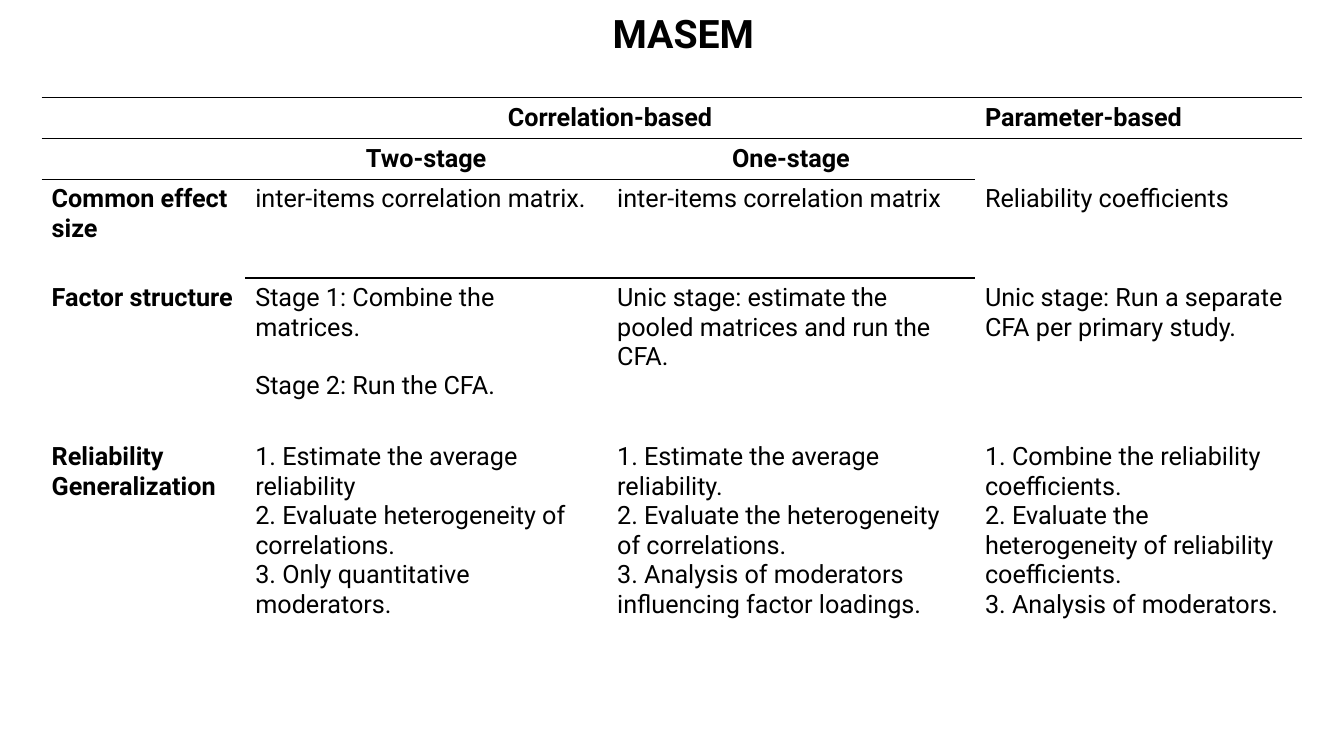
"""Build the MASEM approaches comparison slide."""
from lxml.etree import SubElement
from pptx import Presentation
from pptx.dml.color import RGBColor
from pptx.enum.text import MSO_ANCHOR, PP_ALIGN
from pptx.oxml.ns import qn
from pptx.util import Cm, Pt

TITLE = "MASEM"
APPROACHES = [
    ["", "Correlation-based", "", "Parameter-based"],
    ["", "Two-stage", "One-stage", ""],
    ["Common effect size", "inter-items correlation matrix.",
     "inter-items correlation matrix", "Reliability coefficients"],
    ["Factor structure",
     "Stage 1: Combine the matrices.\nStage 2: Run the CFA.",
     "Unic stage: estimate the pooled matrices and run the CFA.",
     "Unic stage: Run a separate CFA per primary study."],
    ["Reliability Generalization",
     "1. Estimate the average reliability\n"
     "2. Evaluate heterogeneity of correlations.\n"
     "3. Only quantitative moderators.",
     "1. Estimate the average reliability.\n"
     "2. Evaluate the heterogeneity of correlations.\n"
     "3. Analysis of moderators influencing factor loadings.",
     "1. Combine the reliability coefficients.\n"
     "2. Evaluate the heterogeneity of reliability coefficients.\n"
     "3. Analysis of moderators."],
]
HEADER_ROWS = 2
COLUMN_WIDTHS = [5.13, 9.12, 9.27, 8.23]
ROW_HEIGHTS = [1.04, 1.01, 2.49, 4.01, 4.95]
RULED_COLUMNS = {0: (0, 1, 2, 3), 1: (0, 1, 2, 3), 2: (0, 1, 2), 3: (1, 2)}
COLORS = {"ink": "000000"}
FONT = "Roboto"
PLAIN_TABLE_STYLE = "{2D5ABB26-0587-4C30-8999-92F81FD0307C}"


def style_text(paragraph, size, bold):
    paragraph.font.size = Pt(size)
    for run in paragraph.runs:
        run.font.name = FONT
        run.font.size = Pt(size)
        run.font.bold = bold
        run.font.color.rgb = RGBColor.from_string(COLORS["ink"])


def draw_borders(cell, row, column):
    ruled = {"lnT": column in RULED_COLUMNS.get(row, ()),
             "lnB": column in RULED_COLUMNS.get(row + 1, ())}
    properties = cell._tc.get_or_add_tcPr()
    for side in ("lnL", "lnR", "lnT", "lnB"):
        border = SubElement(properties, qn(f"a:{side}"), w=str(Pt(1)))
        if ruled.get(side):
            ink = SubElement(border, qn("a:solidFill"))
            SubElement(ink, qn("a:srgbClr"), val=COLORS["ink"])
        else:
            SubElement(border, qn("a:noFill"))


def add_title(slide):
    title = slide.shapes.add_textbox(Cm(2.08), Cm(0.25), Cm(30.28), Cm(1.4))
    title.text_frame.word_wrap = True
    title.text_frame.text = TITLE
    heading = title.text_frame.paragraphs[0]
    heading.alignment = PP_ALIGN.CENTER
    heading.line_spacing = 0.9
    style_text(heading, 28, True)


def fill_cell(cell, row, column):
    draw_borders(cell, row, column)
    cell.fill.background()
    cell.vertical_anchor = MSO_ANCHOR.TOP
    cell.text_frame.text = APPROACHES[row][column]
    is_header = row < HEADER_ROWS
    for paragraph in cell.text_frame.paragraphs:
        centred = is_header and column in (1, 2)
        paragraph.alignment = PP_ALIGN.CENTER if centred else PP_ALIGN.LEFT
        if paragraph.text.startswith("Stage 2"):
            paragraph.space_before = Pt(21)
        style_text(paragraph, 18, is_header or column == 0)


def add_comparison(slide):
    frame = slide.shapes.add_table(
        len(ROW_HEIGHTS), len(COLUMN_WIDTHS), Cm(1.05), Cm(2.46),
        Cm(sum(COLUMN_WIDTHS)), Cm(sum(ROW_HEIGHTS)))
    comparison = frame.table
    comparison.first_row = comparison.horz_banding = False
    comparison._tbl.tblPr.find(qn("a:tableStyleId")).text = PLAIN_TABLE_STYLE
    for column, width in enumerate(COLUMN_WIDTHS):
        comparison.columns[column].width = Cm(width)
    for row, height in enumerate(ROW_HEIGHTS):
        comparison.rows[row].height = Cm(height)
        for column in range(len(COLUMN_WIDTHS)):
            fill_cell(comparison.cell(row, column), row, column)
    comparison.cell(0, 1).merge(comparison.cell(0, 2))


def main():
    deck = Presentation()
    deck.slide_width, deck.slide_height = Cm(33.87), Cm(19.05)
    slide = deck.slides.add_slide(deck.slide_layouts[6])
    add_title(slide)
    add_comparison(slide)
    deck.save("out.pptx")


if __name__ == "__main__":
    main()
